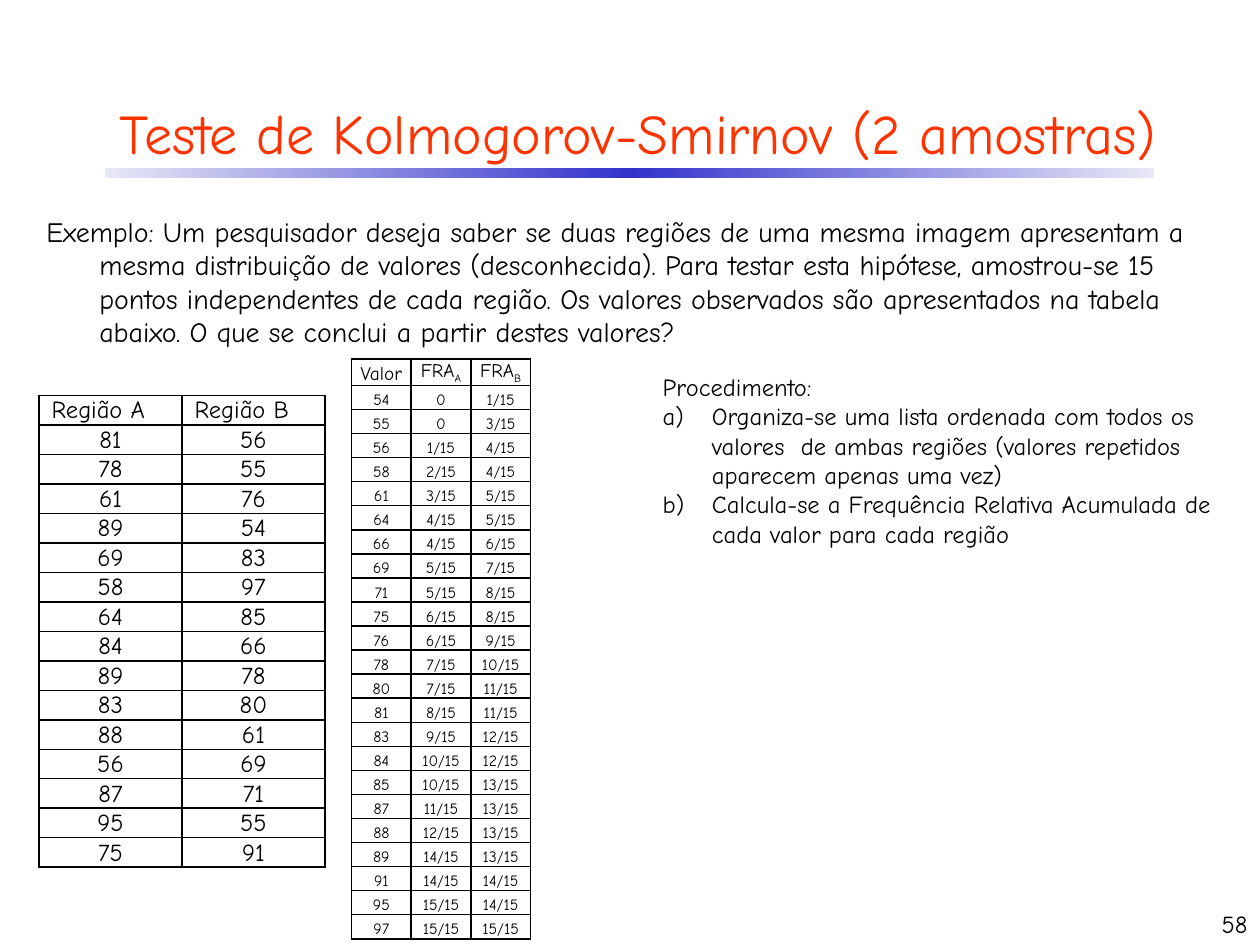
from dataclasses import dataclass

from lxml.etree import SubElement
from pptx import Presentation
from pptx.dml.color import RGBColor as Rgb
from pptx.enum.shapes import MSO_SHAPE as Shape
from pptx.enum.text import MSO_ANCHOR as Anchor, MSO_AUTO_SIZE as Auto, PP_ALIGN as Align
from pptx.oxml import parse_xml
from pptx.oxml.ns import nsdecls, qn
from pptx.util import Inches, Pt


@dataclass(frozen=True)
class Theme:
    font: str = "Comic Neue"
    ink: str = "000000"
    title: str = "FF3300"
    paper: str = "FFFFFF"
    edge: str = "E8E8F6"
    core: str = "3333CC"
    head: int = 32
    lead: int = 16
    body: int = 14
    label: int = 11
    small: int = 9


THEME = Theme()

AREA_A = [81, 78, 61, 89, 69, 58, 64, 84, 89, 83, 88, 56, 87, 95, 75]
AREA_B = [56, 55, 76, 54, 83, 97, 85, 66, 78, 80, 61, 69, 71, 55, 91]

LEAD = (
    "Exemplo: Um pesquisador deseja saber se duas regiões de uma mesma imagem "
    "apresentam a mesma distribuição de valores (desconhecida). Para testar esta "
    "hipótese, amostrou-se 15 pontos independentes de cada região. Os valores "
    "observados são apresentados na tabela abaixo. O que se conclui a partir "
    "destes valores?"
)
STEPS = [
    "Organiza-se uma lista ordenada com todos os valores  de ambas regiões "
    "(valores repetidos aparecem apenas uma vez)",
    "Calcula-se a Frequência Relativa Acumulada de cada valor para cada região",
]


def place(shape, box):
    shape.left, shape.top, shape.width, shape.height = map(Inches, box)


def style(para, size, color=THEME.ink, align=Align.LEFT):
    para.alignment = align
    for run in para.runs:
        run.font.name = THEME.font
        run.font.size = Pt(size)
        run.font.color.rgb = Rgb.from_string(color)


def indent(para, depth, mark="buNone", **attrs):
    props = para._p.get_or_add_pPr()
    props.set("marL", str(Inches(depth)))
    props.set("indent", str(-Inches(depth)))
    SubElement(props, qn(f"a:{mark}"), attrs)


def add_text(slide, box, text, size, align=Align.LEFT, anchor=Anchor.TOP):
    shape = slide.shapes.add_textbox(*map(Inches, box))
    frame = shape.text_frame
    frame.word_wrap = True
    frame.vertical_anchor = anchor
    frame.text = text
    style(frame.paragraphs[0], size, align=align)
    return frame


def add_title(slide, box):
    shape = slide.shapes.title
    place(shape, box)
    frame = shape.text_frame
    frame.text = "Teste de Kolmogorov-Smirnov (2 amostras)"
    frame.vertical_anchor = Anchor.MIDDLE
    frame.auto_size = Auto.NONE
    style(frame.paragraphs[0], THEME.head, THEME.title, Align.CENTER)


def add_rule(slide, box):
    rule = slide.shapes.add_shape(Shape.RECTANGLE, *map(Inches, box))
    rule.shadow.inherit = False
    rule.line.fill.background()
    stops = "".join(
        f'<a:gs pos="{pos}"><a:srgbClr val="{color}"/></a:gs>'
        for pos, color in ((0, THEME.edge), (50000, THEME.core), (100000, THEME.edge))
    )
    fill = parse_xml(
        f'<a:gradFill {nsdecls("a")}><a:gsLst>{stops}</a:gsLst><a:lin ang="0"/></a:gradFill>'
    )
    rule._element.spPr.find(qn("a:prstGeom")).addnext(fill)


def add_lead(slide, box):
    frame = add_text(slide, box, LEAD, THEME.lead)
    indent(frame.paragraphs[0], 0.42)


def add_steps(slide, box):
    shape = slide.placeholders[1]
    place(shape, box)
    frame = shape.text_frame
    frame.text = "\n".join(["Procedimento:", *STEPS])
    frame.auto_size = Auto.NONE
    first, *rest = frame.paragraphs
    for para in frame.paragraphs:
        para.space_before = Pt(0)
        para.line_spacing = 1.5 if para is first else 1.0
        style(para, THEME.body)
    indent(first, 0.39)
    for para in rest:
        indent(para, 0.39, "buFont", typeface="+mj-lt")
        SubElement(para._p.pPr, qn("a:buAutoNum"), type="alphaLcParenR")


def add_edges(cell):
    props = cell._tc.get_or_add_tcPr()
    for side in "LRTB":
        line = SubElement(props, qn(f"a:ln{side}"), w=str(Pt(1)))
        fill = SubElement(line, qn("a:solidFill"))
        SubElement(fill, qn("a:srgbClr"), val=THEME.ink)


def fill_cell(cell, text, size, align=Align.CENTER, anchor=Anchor.BOTTOM, pad=0, lead=None):
    add_edges(cell)
    cell.fill.solid()
    cell.fill.fore_color.rgb = Rgb.from_string(THEME.paper)
    cell.margin_left = cell.margin_right = Inches(pad)
    cell.margin_top = cell.margin_bottom = 0
    cell.vertical_anchor = anchor
    para = cell.text_frame.paragraphs[0]
    base, _, sub = text.partition("_")
    para.add_run().text = base
    if sub:
        run = para.add_run()
        run.text = sub
        run._r.get_or_add_rPr().set("baseline", "-25000")
    if lead:
        para.line_spacing = Pt(lead)
    style(para, size, align=align)


def add_grid(slide, box, rows, top, head, body):
    high = (box[3] - top) / (len(rows) - 1)
    wide = box[2] / len(rows[0])
    shape = slide.shapes.add_table(len(rows), len(rows[0]), *map(Inches, box))
    table = shape.table
    for col in table.columns:
        col.width = Inches(wide)
    for i, row in enumerate(rows):
        table.rows[i].height = Inches(high if i else top)
        for j, text in enumerate(row):
            fill_cell(table.cell(i, j), str(text), **(body if i else head))


def add_data(slide, box):
    rows = [("Região A", "Região B"), *zip(AREA_A, AREA_B)]
    head = dict(size=THEME.body, align=Align.LEFT, anchor=Anchor.MIDDLE, pad=0.1)
    add_grid(slide, box, rows, box[3] / len(rows), head, dict(size=THEME.body))


def share(area, value):
    count = sum(item <= value for item in area)
    return f"{count}/{len(area)}" if count else "0"


def add_freq(slide, box):
    rows = [("Valor", "FRA_A", "FRA_B")]
    for value in sorted({*AREA_A, *AREA_B}):
        rows.append((value, share(AREA_A, value), share(AREA_B, value)))
    body = dict(size=THEME.small, pad=0.01, lead=12.8)
    add_grid(slide, box, rows, 0.18, dict(size=THEME.label), body)


def main():
    deck = Presentation()
    deck.slide_width, deck.slide_height = Inches(10), Inches(7.5)
    slide = deck.slides.add_slide(deck.slide_layouts[1])
    add_rule(slide, (0.83, 1.33, 8.33, 0.08))
    add_title(slide, (0.33, 0.67, 9.47, 0.75))
    add_lead(slide, (0.27, 1.65, 9.57, 1.18))
    add_steps(slide, (5.16, 2.9, 4.77, 1.63))
    add_data(slide, (0.31, 3.14, 2.27, 3.73))
    add_freq(slide, (2.79, 2.85, 1.42, 4.58))
    add_text(slide, (7.92, 7, 2.08, 0.5), "58", THEME.body, Align.RIGHT, Anchor.BOTTOM)
    deck.save("out.pptx")


if __name__ == "__main__":
    main()
